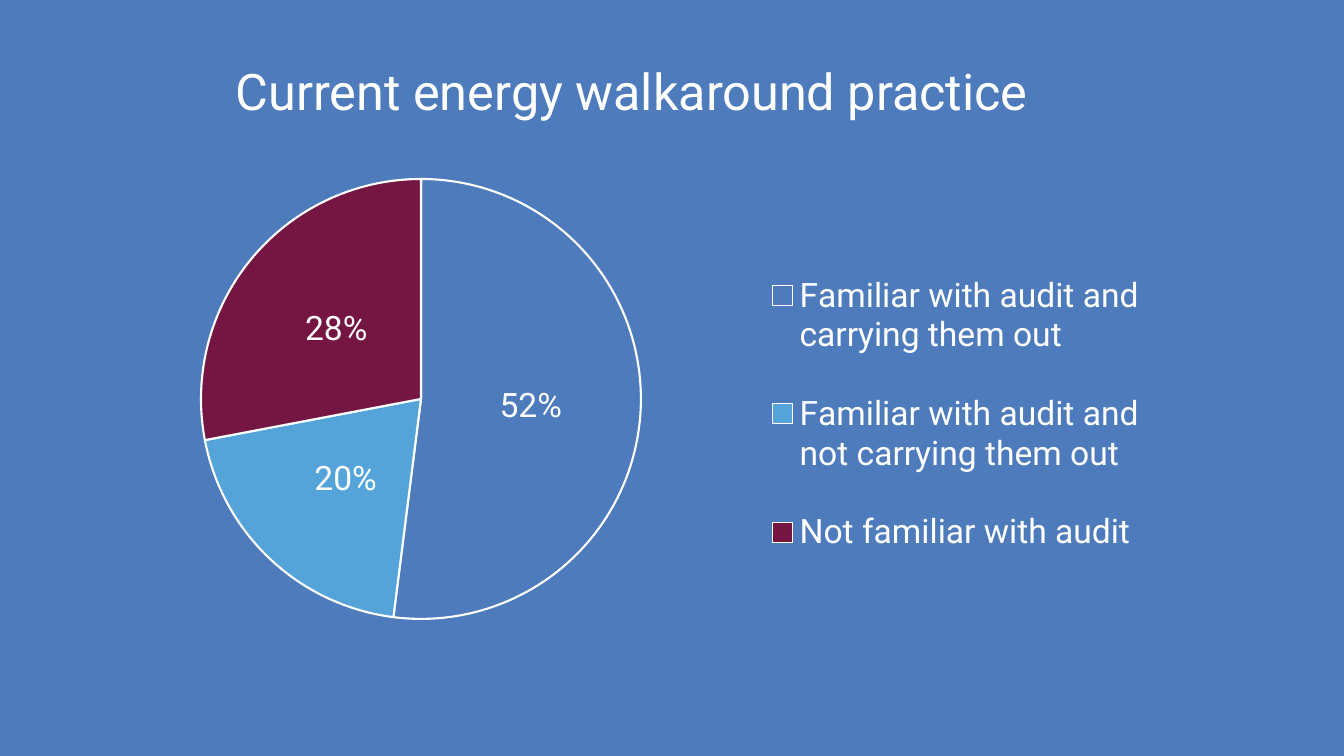
import pptx
import pptx.chart.data
import pptx.dml.color
import pptx.enum.chart
import pptx.enum.text
import pptx.oxml
import pptx.oxml.ns
import pptx.util

EMU_PER_INCH = 914400
PX_PER_INCH = 100.8
FONT = "Roboto"
WHITE = pptx.dml.color.RGBColor(0xFF, 0xFF, 0xFF)
BLUE = pptx.dml.color.RGBColor(0x4D, 0x7B, 0xBC)
SKY = pptx.dml.color.RGBColor(0x54, 0xA4, 0xDA)
MAROON = pptx.dml.color.RGBColor(0x75, 0x16, 0x42)

ANSWERS = [
    ("Familiar with audit and carrying them out", 52, BLUE),
    ("Familiar with audit and not carrying them out", 20, SKY),
    ("Not familiar with audit", 28, MAROON),
]
CHART_BOX = (113, 160, 1037, 491)
PIE_BOX = (201, 179, 440, 440)
LEGEND_BOX = (761, 237, 389, 354)


def px(length):
    return pptx.util.Emu(round(length * EMU_PER_INCH / PX_PER_INCH))


def style_font(font, size):
    font.name = FONT
    font.size = pptx.util.Pt(size)
    font.color.rgb = WHITE


def add_title(slide, text, box):
    title = slide.shapes.title
    title.left, title.top, title.width, title.height = map(px, box)
    frame = title.text_frame
    frame.text = text
    frame.vertical_anchor = pptx.enum.text.MSO_ANCHOR.MIDDLE
    paragraph = frame.paragraphs[0]
    paragraph.alignment = pptx.enum.text.PP_ALIGN.CENTER
    paragraph.line_spacing = 0.9
    style_font(paragraph.font, 36)


def place_in_chart(element, box, index, inner=False):
    """Fix a chart part at a slide box, as fractions of the chart frame."""
    left, top, width, height = CHART_BOX
    fractions = {
        "x": (box[0] - left) / width,
        "y": (box[1] - top) / height,
        "w": box[2] / width,
        "h": box[3] / height,
    }
    for layout in element.findall(pptx.oxml.ns.qn("c:layout")):
        element.remove(layout)
    target = '<c:layoutTarget val="inner"/>' if inner else ""
    modes = "".join(f'<c:{axis}Mode val="edge"/>' for axis in "xy")
    sizes = "".join(f'<c:{key} val="{value:.4f}"/>' for key, value in fractions.items())
    element.insert(index, pptx.oxml.parse_xml(
        f'<c:layout {pptx.oxml.ns.nsdecls("c")}><c:manualLayout>'
        f"{target}{modes}{sizes}</c:manualLayout></c:layout>"))


def style_slices(plot):
    plot.vary_by_categories = True
    for index, (_, _, color) in enumerate(ANSWERS):
        slice_format = plot.series[0].points[index].format
        slice_format.fill.solid()
        slice_format.fill.fore_color.rgb = color
        slice_format.line.color.rgb = WHITE
        slice_format.line.width = pptx.util.Pt(1.5)


def style_labels(plot):
    plot.has_data_labels = True
    labels = plot.data_labels
    labels.show_value = False
    labels.show_percentage = True
    labels.number_format = "0%"
    labels.number_format_is_linked = False
    labels.position = pptx.enum.chart.XL_LABEL_POSITION.CENTER
    style_font(labels.font, 24)


def add_pie(slide):
    data = pptx.chart.data.CategoryChartData()
    data.categories = [name for name, _, _ in ANSWERS]
    data.add_series("Series 1", [share for _, share, _ in ANSWERS])
    chart = slide.shapes.add_chart(
        pptx.enum.chart.XL_CHART_TYPE.PIE, *map(px, CHART_BOX), data).chart
    chart.has_title = False
    chart.font.name = FONT
    chart.font.size = pptx.util.Pt(10)
    style_slices(chart.plots[0])
    style_labels(chart.plots[0])

    chart.has_legend = True
    legend = chart.legend
    legend.position = pptx.enum.chart.XL_LEGEND_POSITION.RIGHT
    legend.include_in_layout = False
    style_font(legend.font, 24)

    plot_area = chart.element.find(".//" + pptx.oxml.ns.qn("c:plotArea"))
    place_in_chart(plot_area, PIE_BOX, 0, inner=True)
    legend_element = chart.element.find(".//" + pptx.oxml.ns.qn("c:legend"))
    place_in_chart(legend_element, LEGEND_BOX, 1)


def main():
    presentation = pptx.Presentation()
    presentation.slide_width = px(1344)
    presentation.slide_height = px(756)
    slide = presentation.slides.add_slide(presentation.slide_layouts[5])
    slide.background.fill.solid()
    slide.background.fill.fore_color.rgb = BLUE
    add_title(slide, "Current energy walkaround practice", (0, 53, 1264, 83))
    add_pie(slide)
    presentation.save("out.pptx")


if __name__ == "__main__":
    main()
